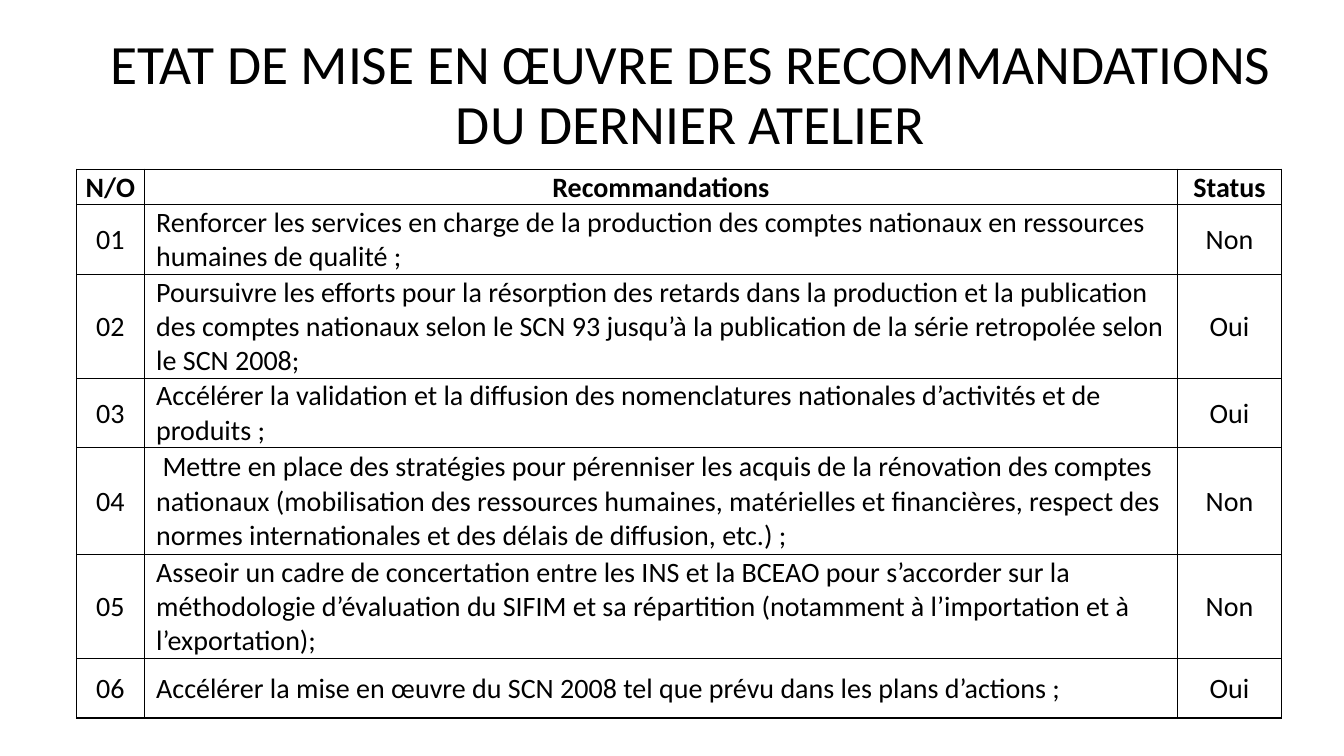
from lxml import etree
from pptx import Presentation
from pptx.dml.color import RGBColor
from pptx.enum.text import MSO_ANCHOR, MSO_AUTO_SIZE, PP_ALIGN
from pptx.oxml.ns import qn
from pptx.util import Inches, Pt

CENTER, LEFT = PP_ALIGN.CENTER, PP_ALIGN.LEFT
MIDDLE, BOTTOM = MSO_ANCHOR.MIDDLE, MSO_ANCHOR.BOTTOM
NO_AUTOFIT = MSO_AUTO_SIZE.NONE

TITLE_ONLY = 5
FONT = "Calibri"
COLORS = {"text": "000000", "border": "000000", "background": "FFFFFF"}

TITLE = "ETAT DE MISE EN ŒUVRE DES RECOMMANDATIONS DU DERNIER ATELIER"
HEADERS = ("N/O", "Recommandations", "Status")
RECOMMENDATIONS = [
    ("Renforcer les services en charge de la production des comptes nationaux "
     "en ressources humaines de qualité ;", "Non"),
    ("Poursuivre les efforts pour la résorption des retards dans la production "
     "et la publication des comptes nationaux selon le SCN 93 jusqu’à la "
     "publication de la série retropolée selon le SCN 2008;", "Oui"),
    ("Accélérer la validation et la diffusion des nomenclatures nationales "
     "d’activités et de produits ;", "Oui"),
    (" Mettre en place des stratégies pour pérenniser les acquis de la "
     "rénovation des comptes nationaux (mobilisation des ressources humaines, "
     "matérielles et financières, respect des normes internationales et des "
     "délais de diffusion, etc.) ;", "Non"),
    ("Asseoir un cadre de concertation entre les INS et la BCEAO pour "
     "s’accorder sur la méthodologie d’évaluation du SIFIM et sa répartition "
     "(notamment à l’importation et à l’exportation);", "Non"),
    ("Accélérer la mise en œuvre du SCN 2008 tel que prévu dans les plans "
     "d’actions ;", "Oui"),
]
COLUMN_WIDTHS = (0.67, 10.25, 1.03)
ROW_HEIGHTS = (0.35, 0.6, 0.86, 0.63, 1.06, 0.84, 0.59)


def format_paragraph(p, size, align, bold=False):
    p.alignment = align
    p.font.name = FONT
    p.font.size = Pt(size)
    p.font.bold = bold
    p.font.color.rgb = RGBColor.from_string(COLORS["text"])


def set_title(slide):
    title = slide.shapes.title
    title.left, title.top = Inches(0.99), Inches(0.4)
    title.width, title.height = Inches(11.72), Inches(1.12)
    tf = title.text_frame
    tf.text = TITLE
    tf.word_wrap = True
    tf.auto_size = NO_AUTOFIT
    tf.vertical_anchor = MIDDLE
    tf.margin_left = tf.margin_right = Inches(0.05)
    p = tf.paragraphs[0]
    format_paragraph(p, 39.6, CENTER)
    p.line_spacing = 0.9


def set_borders(cell):
    """Draw a 1 pt line on each side; lines must precede the fill in tcPr."""
    tc_pr = cell._tc.get_or_add_tcPr()
    for i, side in enumerate(("a:lnL", "a:lnR", "a:lnT", "a:lnB")):
        line = etree.Element(qn(side), w=str(Pt(1)))
        fill = etree.SubElement(line, qn("a:solidFill"))
        etree.SubElement(fill, qn("a:srgbClr"), val=COLORS["border"])
        tc_pr.insert(i, line)


def fill_cell(cell, text, is_header, is_description):
    cell.text = text
    cell.margin_left = Inches(0.12 if is_description else 0.01)
    cell.margin_right = cell.margin_top = Inches(0.01)
    cell.margin_bottom = 0
    cell.vertical_anchor = BOTTOM if is_header else MIDDLE
    cell.fill.solid()
    cell.fill.fore_color.rgb = RGBColor.from_string(COLORS["background"])
    format_paragraph(cell.text_frame.paragraphs[0], 20,
                     LEFT if is_description else CENTER, is_header)
    set_borders(cell)


def add_recommendations(slide):
    rows = [HEADERS] + [(f"{n:02}", text, status) for n, (text, status)
                        in enumerate(RECOMMENDATIONS, start=1)]
    table = slide.shapes.add_table(
        len(rows), len(HEADERS), Inches(0.76), Inches(1.68),
        Inches(sum(COLUMN_WIDTHS)), Inches(sum(ROW_HEIGHTS))).table
    for column, width in zip(table.columns, COLUMN_WIDTHS):
        column.width = Inches(width)
    for row, height in zip(table.rows, ROW_HEIGHTS):
        row.height = Inches(height)
    for i, values in enumerate(rows):
        for j, text in enumerate(values):
            fill_cell(table.cell(i, j), text, is_header=i == 0,
                      is_description=i > 0 and j == 1)


def main():
    prs = Presentation()
    prs.slide_width, prs.slide_height = Inches(13.33), Inches(7.5)
    slide = prs.slides.add_slide(prs.slide_layouts[TITLE_ONLY])
    set_title(slide)
    add_recommendations(slide)
    prs.save("out.pptx")


if __name__ == "__main__":
    main()
